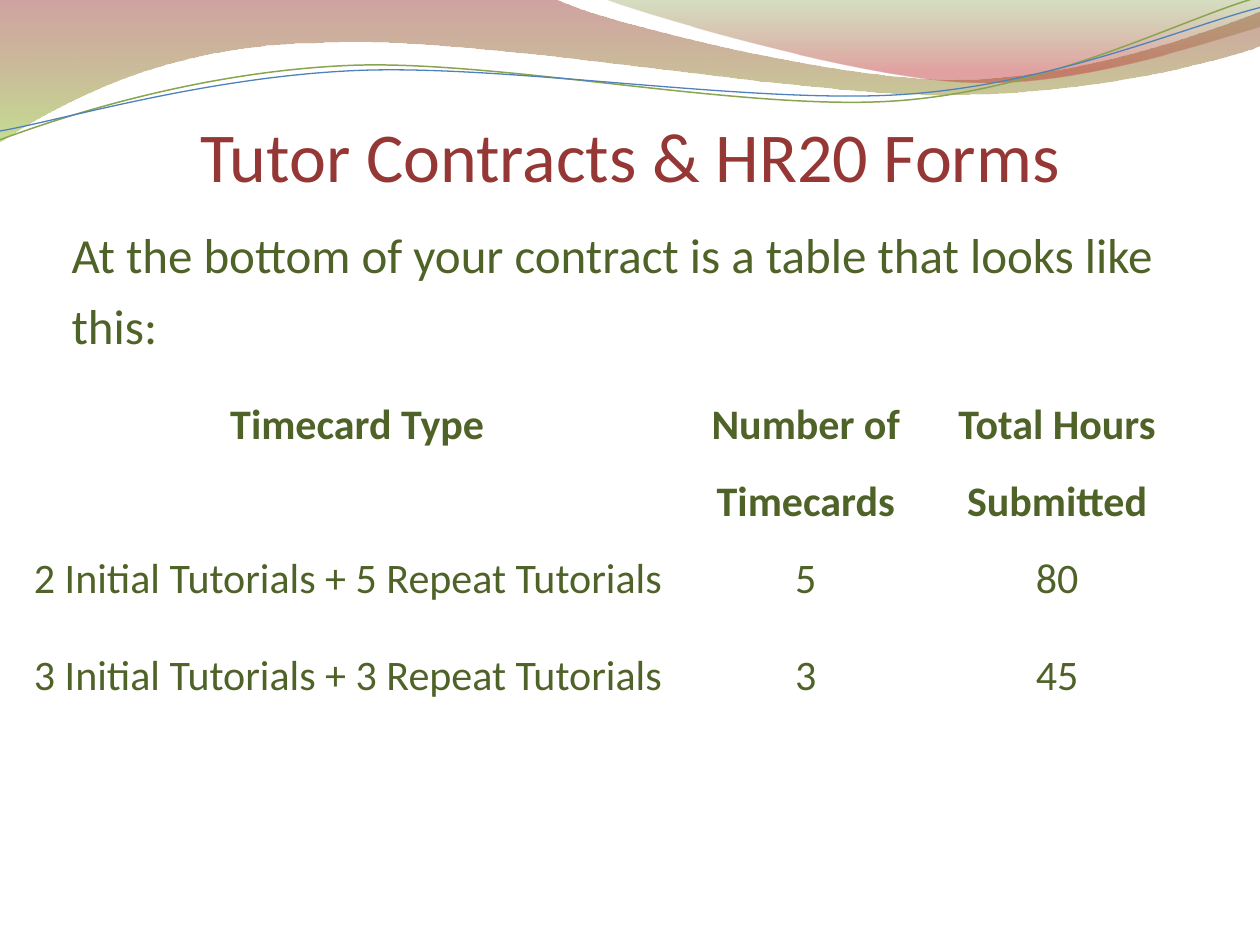
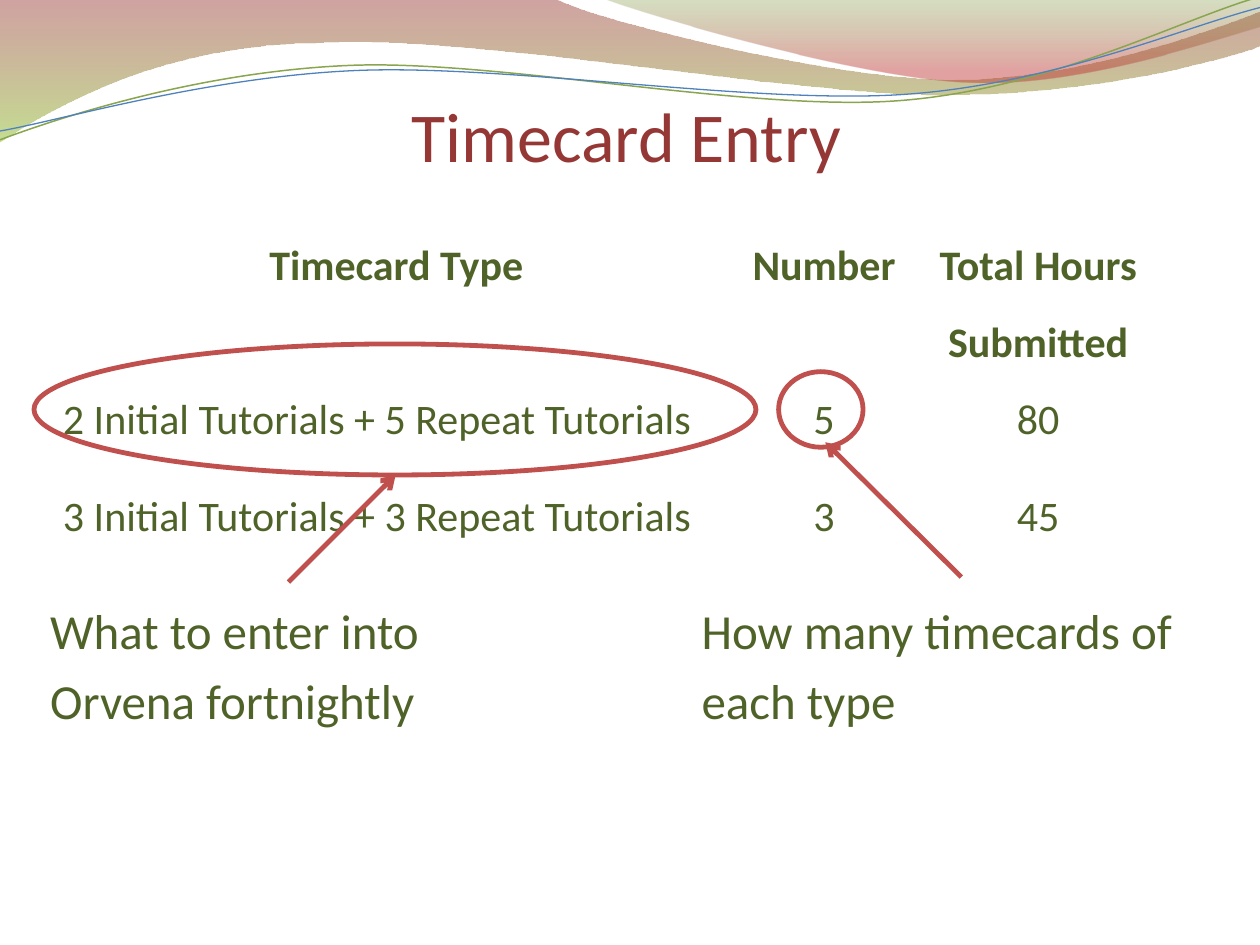
from dataclasses import dataclass
from typing import Optional

from lxml.etree import SubElement
from pptx import Presentation
from pptx.dml.color import RGBColor
from pptx.enum.shapes import MSO_CONNECTOR, MSO_SHAPE
from pptx.enum.text import MSO_ANCHOR, MSO_AUTO_SIZE, PP_ALIGN
from pptx.oxml.ns import qn
from pptx.util import Inches, Pt


@dataclass(frozen=True)
class Theme:
    font: str = "Calibri"
    title_color: str = "953735"
    text_color: str = "4F6228"
    mark_color: str = "C0504D"
    title_size: float = 40
    body_size: float = 28
    table_size: float = 24
    mark_width: float = 2.75


@dataclass(frozen=True)
class GradientStop:
    position: float
    color: str
    opacity: int


@dataclass(frozen=True)
class Wave:
    start: tuple[float, float]
    segments: tuple[tuple[float, ...], ...]
    stops: tuple[GradientStop, ...] = ()
    line_color: Optional[str] = None
    line_width: float = 0


@dataclass(frozen=True)
class Box:
    left: float
    top: float
    width: float
    height: float

    def lengths(self):
        return tuple(Inches(value) for value in (self.left, self.top, self.width, self.height))


@dataclass(frozen=True)
class Arrow:
    start: tuple[float, float]
    end: tuple[float, float]


@dataclass(frozen=True)
class TimecardTable:
    box: Box
    widths: tuple[float, ...]
    headings: tuple[str, ...]


THEME = Theme()
HEADER_HEIGHT, ROW_HEIGHT = 1.22, 0.77

WAVES = (
    Wave(
        (0, -0.01),
        (
            (4.4, -0.01),
            (4.76, 0.17, 6.64, 0.63, 7.58, 0.63),
            (8.53, 0.63, 9.58, 0.26, 10, 0.09),
            (10.01, 0.36),
            (9.83, 0.44, 8.7, 0.76, 7.46, 0.75),
            (6.22, 0.75, 3.82, 0.28, 2.57, 0.34),
            (1.29, 0.35, 0.46, 0.83, -0.01, 1.13),
        ),
        stops=(GradientStop(0, "973330", 45), GradientStop(1, "95C238", 55)),
    ),
    Wave(
        (4.79, -0.01),
        (
            (5.09, 0.11, 6.82, 0.62, 7.69, 0.65),
            (8.56, 0.69, 9.61, 0.32, 10, 0.21),
            (10, 0),
        ),
        stops=(GradientStop(0, "769537", 30), GradientStop(0.8, "BE3330", 45)),
    ),
    Wave(
        (0, 1.11),
        (
            (0.48, 0.93, 1.58, 0.57, 2.77, 0.52),
            (3.95, 0.47, 5.93, 0.89, 7.13, 0.8),
            (8.33, 0.71, 9.38, 0.15, 9.98, -0.02),
        ),
        line_color="89A54F",
        line_width=0.85,
    ),
    Wave(
        (0, 1.04),
        (
            (0.47, 0.96, 1.64, 0.61, 2.83, 0.56),
            (4.03, 0.51, 5.97, 0.83, 7.17, 0.75),
            (8.36, 0.67, 9.41, 0.21, 10, 0.06),
        ),
        line_color="4F81BD",
        line_width=0.75,
    ),
)

TIMECARD_ROWS = (
    ("2 Initial Tutorials + 5 Repeat Tutorials", "5", "80"),
    ("3 Initial Tutorials + 3 Repeat Tutorials", "3", "45"),
)
CONTRACT_TABLE = TimecardTable(
    Box(0.2, 2.97, 9.26, 2.75),
    (5.27, 1.85, 2.14),
    ("Timecard Type", "Number of Timecards", "Total Hours Submitted"),
)
ENTRY_TABLE = TimecardTable(
    Box(0.43, 1.71, 8.83, 2.75),
    (5.43, 1.36, 2.04),
    ("Timecard Type", "Number", "Total Hours Submitted"),
)
TYPE_ELLIPSE = Box(0.27, 2.73, 5.73, 1.04)
NUMBER_ELLIPSE = Box(6.18, 2.95, 0.67, 0.6)
TYPE_ARROW = Arrow((2.29, 4.62), (3.14, 3.77))
NUMBER_ARROW = Arrow((7.63, 4.58), (6.55, 3.51))


def add_wave(slide, wave: Wave):
    builder = slide.shapes.build_freeform(Inches(wave.start[0]), Inches(wave.start[1]))
    points = [
        (Inches(x), Inches(y))
        for segment in wave.segments
        for x, y in zip(segment[::2], segment[1::2])
    ]
    builder.add_line_segments(points, close=bool(wave.stops))
    shape = builder.convert_to_shape()
    outline = next(shape._element.iter(qn("a:path")))
    lines = iter(outline.findall(qn("a:lnTo")))
    for segment in wave.segments:
        line = next(lines)
        if len(segment) == 6:
            curve = SubElement(outline, qn("a:cubicBezTo"))
            line.addprevious(curve)
            for control in (line, next(lines), next(lines)):
                curve.append(control[0])
                outline.remove(control)
    return shape


def fill_gradient(shape, stops: tuple[GradientStop, ...]) -> None:
    shape.fill.gradient()
    shape.fill.gradient_angle = 270
    for target, stop in zip(shape.fill.gradient_stops, stops):
        target.position = stop.position
        target.color.rgb = RGBColor.from_string(stop.color)
    colors = shape._element.spPr.iter(qn("a:srgbClr"))
    for color, stop in zip(colors, stops):
        SubElement(color, qn("a:alpha"), val=str(stop.opacity * 1000))


def set_line(shape, color: str, width: float) -> None:
    shape.line.color.rgb = RGBColor.from_string(color)
    shape.line.width = Pt(width)


def add_waves_to_layout(slide) -> None:
    layout_tree = slide.slide_layout.shapes.element
    for index, wave in enumerate(WAVES):
        shape = add_wave(slide, wave)
        shape.shadow.inherit = False
        if wave.stops:
            fill_gradient(shape, wave.stops)
            shape.line.fill.background()
        else:
            shape.fill.background()
            set_line(shape, wave.line_color, wave.line_width)
        shape._element.nvSpPr.cNvPr.set("id", str(100 + index))
        layout_tree.insert(2 + index, shape._element)


def add_run(paragraph, text: str, size: float, color: str, bold: bool = False) -> None:
    run = paragraph.add_run()
    run.text = text
    run.font.name = THEME.font
    run.font.size = Pt(size)
    run.font.bold = bold
    run.font.color.rgb = RGBColor.from_string(color)


def set_title(slide, text: str, box: Box) -> None:
    title = slide.shapes.title
    title.left, title.top, title.width, title.height = box.lengths()
    frame = title.text_frame
    frame.auto_size = MSO_AUTO_SIZE.NONE
    frame.vertical_anchor = MSO_ANCHOR.BOTTOM
    frame.margin_left = frame.margin_right = frame.margin_bottom = 0
    frame.margin_top = Inches(0.05)
    paragraph = frame.paragraphs[0]
    paragraph.alignment = PP_ALIGN.CENTER
    add_run(paragraph, text, THEME.title_size, THEME.title_color)


def add_text(slide, text: str, box: Box):
    shape = slide.shapes.add_textbox(*box.lengths())
    shape.text_frame.word_wrap = True
    paragraph = shape.text_frame.paragraphs[0]
    paragraph.line_spacing = 1.2
    add_run(paragraph, text, THEME.body_size, THEME.text_color)
    return shape


def add_timecard_table(slide, timecards: TimecardTable) -> None:
    rows = (timecards.headings, *TIMECARD_ROWS)
    table = slide.shapes.add_table(
        len(rows), len(timecards.widths), *timecards.box.lengths()
    ).table
    table.first_row = table.horz_banding = False
    for column, width in zip(table.columns, timecards.widths):
        column.width = Inches(width)
    for row_index, texts in enumerate(rows):
        heading = row_index == 0
        table.rows[row_index].height = Inches(HEADER_HEIGHT if heading else ROW_HEIGHT)
        for column_index, text in enumerate(texts):
            cell = table.cell(row_index, column_index)
            cell.fill.background()
            cell.margin_left = cell.margin_right = Inches(0.07)
            cell.margin_top = cell.margin_bottom = 0
            paragraph = cell.text_frame.paragraphs[0]
            centered = heading or column_index > 0
            paragraph.alignment = PP_ALIGN.CENTER if centered else PP_ALIGN.LEFT
            paragraph.line_spacing = 1.5
            paragraph.space_before = Pt(12)
            add_run(paragraph, text, THEME.table_size, THEME.text_color, heading)


def add_ellipse(slide, box: Box) -> None:
    ellipse = slide.shapes.add_shape(MSO_SHAPE.OVAL, *box.lengths())
    ellipse.shadow.inherit = False
    ellipse.fill.background()
    set_line(ellipse, THEME.mark_color, THEME.mark_width)


def add_arrow(slide, arrow: Arrow):
    ends = (Inches(value) for value in (*arrow.start, *arrow.end))
    connector = slide.shapes.add_connector(MSO_CONNECTOR.STRAIGHT, *ends)
    set_line(connector, THEME.mark_color, THEME.mark_width)
    properties = connector._element.spPr
    SubElement(properties.find(qn("a:ln")), qn("a:tailEnd"), type="arrow")
    SubElement(properties, qn("a:effectLst"))
    return connector


def build_contract_slide(slide) -> None:
    set_title(slide, "Tutor Contracts & HR20 Forms", Box(0.5, 0.78, 9, 0.78))
    add_text(
        slide,
        "At the bottom of your contract is a table that looks like this:",
        Box(0.47, 1.64, 9.14, 1.41),
    )
    add_timecard_table(slide, CONTRACT_TABLE)


def build_entry_slide(slide) -> None:
    add_timecard_table(slide, ENTRY_TABLE)
    set_title(slide, "Timecard Entry", Box(0.47, 0.62, 9, 0.78))
    type_note = add_text(
        slide, "What to enter into Orvena fortnightly", Box(0.3, 4.62, 3.98, 1.23)
    )
    number_note = add_text(
        slide, "How many timecards of each type", Box(5.47, 4.62, 4.25, 1.23)
    )
    for note in (type_note, number_note):
        note.text_frame.auto_size = MSO_AUTO_SIZE.SHAPE_TO_FIT_TEXT
    for box in (TYPE_ELLIPSE, NUMBER_ELLIPSE):
        add_ellipse(slide, box)
    add_arrow(slide, TYPE_ARROW).begin_connect(type_note, 0)
    add_arrow(slide, NUMBER_ARROW)


def main() -> None:
    presentation = Presentation()
    presentation.slide_width = Inches(10)
    presentation.slide_height = Inches(7.5)
    title_only = presentation.slide_layouts[5]
    contract_slide = presentation.slides.add_slide(title_only)
    add_waves_to_layout(contract_slide)
    build_contract_slide(contract_slide)
    build_entry_slide(presentation.slides.add_slide(title_only))
    presentation.save("out.pptx")


if __name__ == "__main__":
    main()
